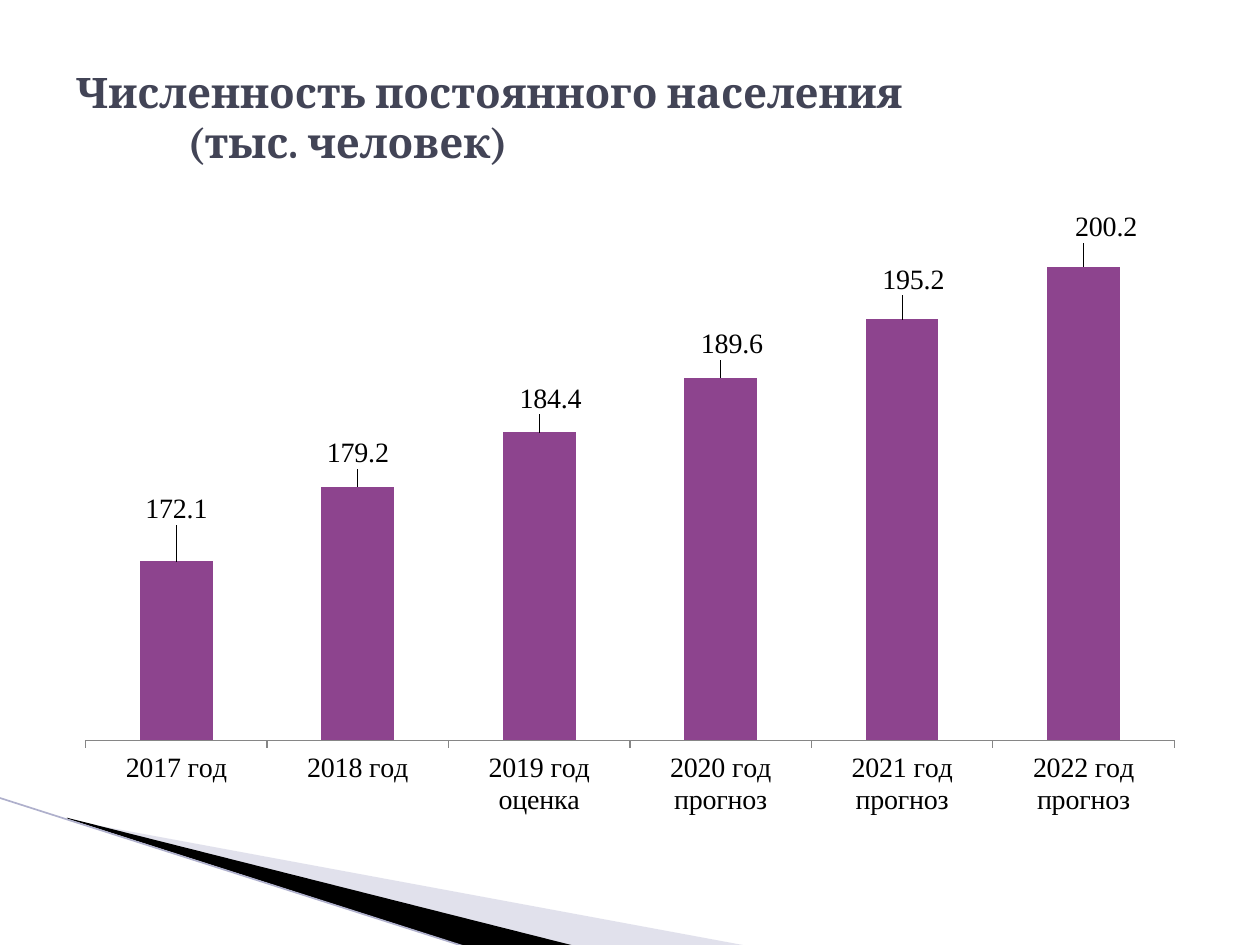
from lxml.etree import SubElement
from pptx import Presentation
from pptx.chart.data import CategoryChartData
from pptx.dml.color import RGBColor
from pptx.enum.chart import XL_CHART_TYPE as ChartType, XL_LABEL_POSITION as LabelPos
from pptx.enum.chart import XL_TICK_MARK as TickMark
from pptx.enum.shapes import MSO_CONNECTOR
from pptx.enum.text import MSO_ANCHOR, PP_ALIGN
from pptx.oxml import parse_xml
from pptx.oxml.ns import nsdecls, qn
from pptx.util import Pt

COLORS = {"title": "424456", "bar": "8D448E", "pale": "B6B6D1",
          "black": "000000", "edge": "AFB0CC", "axis": "868686"}
CHART_BOX = (36, 116.64, 648, 356.4)
TITLE_BOX = (36, 21.6, 648, 90)
AXIS_FONT = {"name": "Times New Roman", "size": Pt(16)}

# category, thousands of people, label shift as a share of the chart (x, y)
POPULATION = [
    ("2017 год", 172.1, 0.0, -0.05),
    ("2018 год", 179.2, 0.0, -0.02),
    ("2019 год оценка", 184.4, 0.01, -0.02),
    ("2020 год прогноз", 189.6, 0.01, -0.02),
    ("2021 год прогноз", 195.2, 0.01, -0.03),
    ("2022 год прогноз", 200.2, 0.02, -0.03),
]


def rgb(name):
    return RGBColor.from_string(COLORS[name])


def set_format(target, values):
    for name, value in values.items():
        setattr(target, name, value)


def set_box(sp, box):
    set_format(sp, dict(zip(("left", "top", "width", "height"), map(Pt, box))))


def manual_layout(**values):
    items = "".join(f'<c:{k} val="{v}"/>' for k, v in values.items())
    return parse_xml(f'<c:layout {nsdecls("c")}><c:manualLayout>{items}'
                     '</c:manualLayout></c:layout>')


def add_wedge(slide, points, color, alpha=None):
    start, *rest = [(Pt(x), Pt(y)) for x, y in points]
    builder = slide.shapes.build_freeform(*start)
    builder.add_line_segments(rest, close=True)
    sp = builder.convert_to_shape()
    sp.shadow.inherit = False
    sp.fill.solid()
    sp.fill.fore_color.rgb = rgb(color)
    sp.line.fill.background()
    if alpha:
        fill = sp.fill._xPr.find(qn("a:solidFill"))
        SubElement(fill[0], qn("a:alpha"), val=str(alpha * 1000))


def add_edge(slide, start, end):
    line = slide.shapes.add_connector(MSO_CONNECTOR.STRAIGHT, *map(Pt, start + end))
    set_format(line.line, {"width": Pt(0.95)})
    line.line.color.rgb = rgb("edge")
    SubElement(line._element.spPr, qn("a:effectLst"))


def add_title(slide):
    title = slide.shapes.title
    set_box(title, TITLE_BOX)
    tf = title.text_frame
    set_format(tf, {"word_wrap": True, "vertical_anchor": MSO_ANCHOR.MIDDLE})
    p = tf.paragraphs[0]
    p.text = "Численность постоянного населения\v(тыс. человек)"
    p.alignment = PP_ALIGN.LEFT
    indent = Pt(64)
    p._p.get_or_add_pPr().set("marL", str(indent))
    p._p.get_or_add_pPr().set("indent", str(-indent))
    for r in p.runs:
        set_format(r.font, {"name": "Cambria", "size": Pt(24), "bold": True})
        r.font.color.rgb = rgb("title")


def shift_labels(series):
    """Place each value label above its bar, moved by its own shift."""
    for i, (_, _, dx, dy) in enumerate(POPULATION):
        label = series.points[i].data_label
        set_format(label.font, AXIS_FONT)
        label.position = LabelPos.OUTSIDE_END
    for d_lbl, (_, _, dx, dy) in zip(series._element.findall(".//" + qn("c:dLbl")),
                                     POPULATION):
        d_lbl.find(qn("c:idx")).addnext(manual_layout(x=dx, y=dy))


def add_population_chart(slide):
    data = CategoryChartData(number_format="#,##0.0")
    data.categories = [row[0] for row in POPULATION]
    data.add_series("Series 1", [row[1] for row in POPULATION])
    chart = slide.shapes.add_chart(ChartType.COLUMN_CLUSTERED,
                                   *map(Pt, CHART_BOX), data).chart
    set_format(chart, {"has_legend": False, "has_title": False})
    set_format(chart.font, {"name": "DejaVu Sans Mono", "size": Pt(18)})
    chart.font.color.rgb = rgb("black")

    set_format(chart.value_axis, {"visible": False, "has_major_gridlines": False,
                                  "minimum_scale": 155, "maximum_scale": 205})
    axis = chart.category_axis
    axis.major_tick_mark = TickMark.OUTSIDE
    set_format(axis.tick_labels.font, AXIS_FONT)
    axis.format.line.color.rgb = rgb("axis")

    plot = chart.plots[0]
    set_format(plot, {"gap_width": 150, "vary_by_categories": False,
                      "has_data_labels": True})
    series = plot.series[0]
    series.format.fill.solid()
    series.format.fill.fore_color.rgb = rgb("bar")
    labels = series.data_labels
    set_format(labels, {"show_value": True, "number_format": "#,##0.0",
                        "number_format_is_linked": False,
                        "position": LabelPos.OUTSIDE_END})
    set_format(labels.font, AXIS_FONT)
    shift_labels(series)

    area = chart._chartSpace.chart.plotArea
    for old in area.findall(qn("c:layout")):
        area.remove(old)
    area.insert(0, manual_layout(layoutTarget="inner", xMode="edge", yMode="edge",
                                 x=0.02, y=0.02, w=0.96, h=0.84))


def main():
    prs = Presentation()
    set_format(prs, {"slide_width": Pt(720), "slide_height": Pt(540)})
    slide = prs.slides.add_slide(prs.slide_layouts[5])
    add_wedge(slide, [(39.6, 468.7), (428.4, 540.7), (328.3, 540.7), (39.6, 468)],
              "pale", alpha=40)
    add_wedge(slide, [(38.2, 467.3), (329, 540.7), (267.8, 541.4), (38.9, 468)],
              "black")
    add_edge(slide, (-0.7, 455.8), (267.1, 541.4))
    add_population_chart(slide)
    add_title(slide)
    prs.save("out.pptx")


if __name__ == "__main__":
    main()
